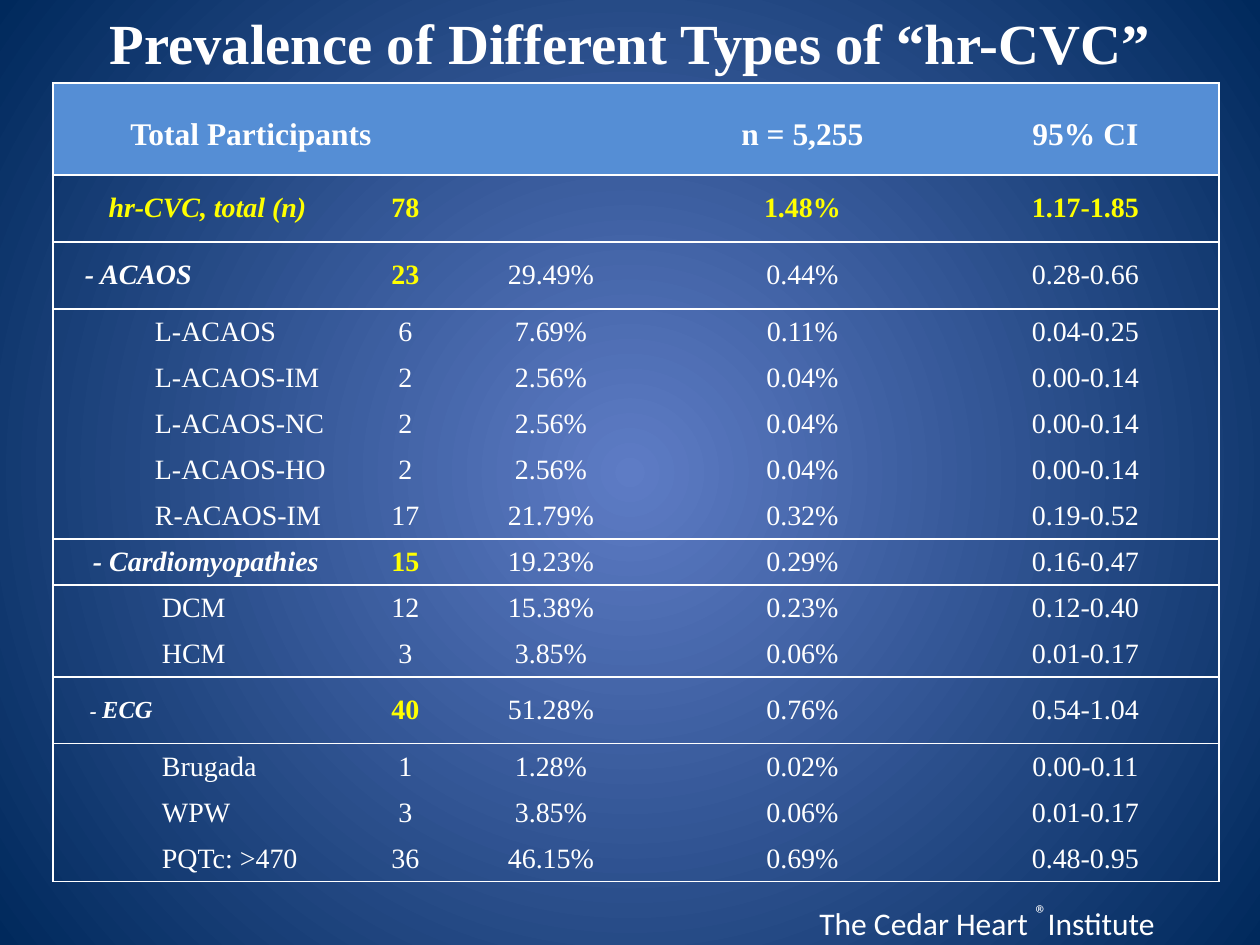
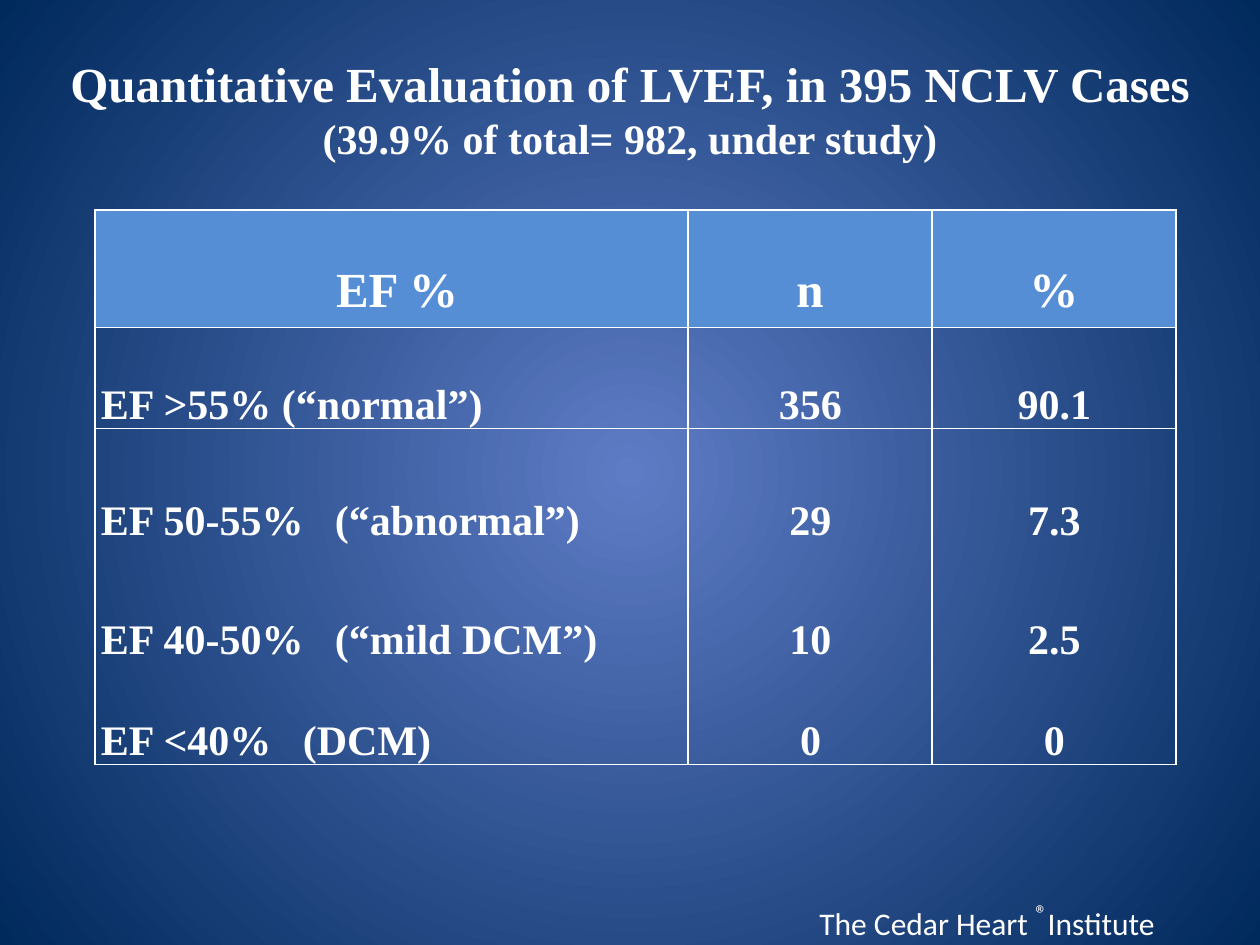
from dataclasses import dataclass, replace

from lxml import etree
from pptx import Presentation
from pptx.dml.color import RGBColor
from pptx.enum.text import MSO_ANCHOR, PP_ALIGN
from pptx.oxml.ns import qn
from pptx.util import Emu, Pt

LEFT, MID = PP_ALIGN.LEFT, PP_ALIGN.CENTER
TOP, CORE, BASE = MSO_ANCHOR.TOP, MSO_ANCHOR.MIDDLE, MSO_ANCHOR.BOTTOM

SCALE = 914400 / 126
WIDE, HIGH = 1260, 945
HEX = {
    "glow": "5E7CC5",
    "navy": "00295C",
    "head": "558ED5",
    "text": "FFFFFF",
    "mark": "FFFF00",
}
SERIF, SANS = "Times New Roman", "Calibri"
PLAIN_GRID = "{2D5ABB26-0587-4C30-8999-92F81FD0307C}"


@dataclass(frozen=True)
class Style:
    size: float
    bold: bool = False
    slant: bool = False
    color: str = "text"
    font: str = SERIF
    rise: int = 0


@dataclass(frozen=True)
class Run:
    text: str
    style: Style


@dataclass(frozen=True)
class Box:
    left: int
    top: int
    width: int
    height: int


@dataclass(frozen=True)
class Cell:
    runs: tuple[Run, ...] = ()
    align: PP_ALIGN = MID
    anchor: MSO_ANCHOR = CORE
    pad: int = 5
    space: float = 1
    fill: str = ""
    tab: int = 0


@dataclass(frozen=True)
class Group:
    name: tuple[Run, ...]
    pad: int
    inset: int
    rows: tuple[tuple[str, ...], ...]


BODY = Style(16)
BOLD = Style(16, bold=True)
NAME = Style(16, bold=True, slant=True)
MARK = Style(16, bold=True, color="mark")
NOTE = Style(18, font=SANS)

FOOT = (
    Run("The Cedar Heart ", NOTE),
    Run("®", Style(24, font=SANS, rise=30000)),
    Run("Institute", NOTE),
)

GROUPS = (
    Group((Run("- ACAOS", NAME),), 32, 102, (
        ("23", "29.49%", "0.44%", "0.28-0.66"),
        ("L-ACAOS", "6", "7.69%", "0.11%", "0.04-0.25"),
        ("L-ACAOS-IM", "2", "2.56%", "0.04%", "0.00-0.14"),
        ("L-ACAOS-NC", "2", "2.56%", "0.04%", "0.00-0.14"),
        ("L-ACAOS-HO", "2", "2.56%", "0.04%", "0.00-0.14"),
        ("R-ACAOS-IM", "17", "21.79%", "0.32%", "0.19-0.52"),
    )),
    Group((Run("- Cardiomyopathies", NAME),), 40, 109, (
        ("15", "19.23%", "0.29%", "0.16-0.47"),
        ("DCM", "12", "15.38%", "0.23%", "0.12-0.40"),
        ("HCM", "3", "3.85%", "0.06%", "0.01-0.17"),
    )),
    Group((Run("- ", replace(NAME, size=12)), Run("ECG", replace(NAME, size=14))), 37, 109, (
        ("40", "51.28%", "0.76%", "0.54-1.04"),
        ("Brugada", "1", "1.28%", "0.02%", "0.00-0.11"),
        ("WPW", "3", "3.85%", "0.06%", "0.01-0.17"),
        ("PQTc: >470", "36", "46.15%", "0.69%", "0.48-0.95"),
    )),
)

# label, tab stop, count, share
BANDS = (
    ("EF >55% (“normal”)", 0, "356", "90.1"),
    ("EF 50-55%\t(“abnormal”)", 234, "29", "7.3"),
    ("EF 40-50%\t(“mild DCM”)", 234, "10", "2.5"),
    ("EF <40%\t(DCM)", 202, "0", "0"),
)


def px(count: int) -> Emu:
    return Emu(round(count * SCALE))


def rgb(key: str) -> RGBColor:
    return RGBColor.from_string(HEX[key])


def place(box: Box) -> tuple[Emu, ...]:
    return tuple(px(v) for v in (box.left, box.top, box.width, box.height))


def write(para, runs: tuple[Run, ...], align: PP_ALIGN) -> None:
    para.alignment = align
    for item in runs:
        run = para.add_run()
        run.text = item.text
        font, style = run.font, item.style
        font.name, font.size = style.font, Pt(style.size)
        font.bold, font.italic = style.bold, style.slant
        font.color.rgb = rgb(style.color)
        if style.rise:
            run.font._element.set("baseline", str(style.rise))


def add_text(slide, box: Box, lines: tuple, align: PP_ALIGN = MID, anchor: MSO_ANCHOR = CORE) -> None:
    frame = slide.shapes.add_textbox(*place(box)).text_frame
    frame.word_wrap = True
    frame.vertical_anchor = anchor
    for i, runs in enumerate(lines):
        para = frame.add_paragraph() if i else frame.paragraphs[0]
        write(para, runs, align)


def add_page(deck):
    """Add a blank slide with the round gradient and the footer."""
    slide = deck.slides.add_slide(deck.slide_layouts[6])
    fill = slide.background.fill
    fill.gradient()
    for stop, key in zip(fill.gradient_stops, ("glow", "navy")):
        stop.color.rgb = rgb(key)
    grad = next(slide.element.iter(qn("a:gradFill")))
    for line in grad.findall(qn("a:lin")):
        grad.remove(line)
    path = etree.SubElement(grad, qn("a:path"), path="circle")
    etree.SubElement(path, qn("a:fillToRect"), {side: "50000" for side in "ltrb"})
    add_text(slide, Box(807, 887, 390, 58), (FOOT,), LEFT, TOP)
    return slide


def rule(cell, sides: str) -> None:
    """Draw 1 pt borders on the sides named by the letters L, R, T, B."""
    props = cell._tc.get_or_add_tcPr()
    for i, side in enumerate(s for s in "LRTB" if s in sides):
        line = etree.Element(qn(f"a:ln{side}"), w=str(Pt(1)))
        fill = etree.SubElement(line, qn("a:solidFill"))
        etree.SubElement(fill, qn("a:srgbClr"), val=HEX["text"])
        props.insert(i, line)


def fill_cell(cell, data: Cell) -> None:
    cell.margin_left, cell.margin_right = px(data.pad), px(5)
    cell.margin_top = cell.margin_bottom = 0
    cell.vertical_anchor = data.anchor
    para = cell.text_frame.paragraphs[0]
    para.line_spacing = data.space
    write(para, data.runs, data.align)
    if data.tab:
        tabs = etree.SubElement(para._p.get_or_add_pPr(), qn("a:tabLst"))
        etree.SubElement(tabs, qn("a:tab"), pos=str(px(data.tab)), algn="l")
    if data.fill:
        cell.fill.solid()
        cell.fill.fore_color.rgb = rgb(data.fill)
    else:
        cell.fill.background()


def add_grid(slide, left: int, top: int, cols: tuple, highs: tuple, rows: list, cuts: set, bars: bool):
    """Add a framed table with a line under each row in cuts, and column lines if bars."""
    box = Box(left, top, sum(cols), sum(highs))
    table = slide.shapes.add_table(len(highs), len(cols), *place(box)).table
    table.first_row = table.horz_banding = False
    table._tbl.tblPr.find(qn("a:tableStyleId")).text = PLAIN_GRID
    for col, width in zip(table.columns, cols):
        col.width = px(width)
    last_row, last_col = len(highs) - 1, len(cols) - 1
    for r, row in enumerate(rows):
        table.rows[r].height = px(highs[r])
        for c, data in enumerate(row):
            cell = table.cell(r, c)
            fill_cell(cell, data)
            sides = "L" if bars or c == 0 else ""
            sides += "R" if bars or c == last_col else ""
            sides += "T" if r == 0 or r - 1 in cuts else ""
            sides += "B" if r == last_row or r in cuts else ""
            rule(cell, sides)
    return table


def head_cell(text: str, size: int, pad: int = 5) -> Cell:
    runs = (Run(text, Style(size, bold=True)),) if text else ()
    return Cell(runs, anchor=TOP, space=2, fill="head", pad=pad)


def mid_cell(text: str, style: Style) -> Cell:
    return Cell((Run(text, style),) if text else ())


def group_rows(group: Group) -> list:
    first, *rest = group.rows
    rows = [[Cell(group.name, LEFT, pad=group.pad), mid_cell(first[0], MARK)]
            + [mid_cell(t, BODY) for t in first[1:]]]
    for name, *vals in rest:
        label = Cell((Run(name, BODY),), LEFT, pad=group.inset)
        rows.append([label] + [mid_cell(t, BODY) for t in vals])
    return rows


def add_types(deck) -> None:
    slide = add_page(deck)
    title = Run("Prevalence of Different Types of “hr-CVC”", Style(32.4, bold=True))
    add_text(slide, Box(63, 10, 1134, 63), ((title,),))
    heads = ("Total Participants", "", "", "n = 5,255", "95% CI")
    total = [mid_cell("hr-CVC, total (n)", replace(MARK, slant=True))]
    total += [mid_cell(t, MARK) for t in ("78", "", "1.48%", "1.17-1.85")]
    rows = [[head_cell(t, 18) for t in heads], total]
    cuts = {0, 1}
    for group in GROUPS:
        rows += group_rows(group)
        cuts.add(len(rows) - 1)
    highs = (92, 67, 67) + (46,) * 8 + (67,) + (46,) * 3
    table = add_grid(slide, 53, 83, (309, 87, 204, 299, 267), highs, rows, cuts, False)
    table.cell(0, 0).merge(table.cell(0, 1))


def add_scores(deck) -> None:
    slide = add_page(deck)
    big, small = Style(28, bold=True), Style(24, bold=True)
    lines = (
        (Run("Quantitative Evaluation of LVEF, in 395 NCLV Cases", big),),
        (Run("(39.9% of total= 982, under study)", small),),
    )
    add_text(slide, Box(42, 38, 1176, 141), lines)
    rows = [[head_cell("EF %", 28, 16), head_cell("n", 28), head_cell("%", 28)]]
    for label, tab, *vals in BANDS:
        base = Cell((Run(label, small),), LEFT, BASE, 6, 2, tab=tab)
        nums = [Cell((Run(t, small),), MID, BASE, 6, 2) for t in vals]
        rows.append([base] + nums)
    add_grid(slide, 95, 210, (593, 244, 244), (108, 93, 116, 119, 99), rows, {0}, True)


def main() -> None:
    deck = Presentation()
    deck.slide_width, deck.slide_height = px(WIDE), px(HIGH)
    add_types(deck)
    add_scores(deck)
    deck.save("out.pptx")


if __name__ == "__main__":
    main()
